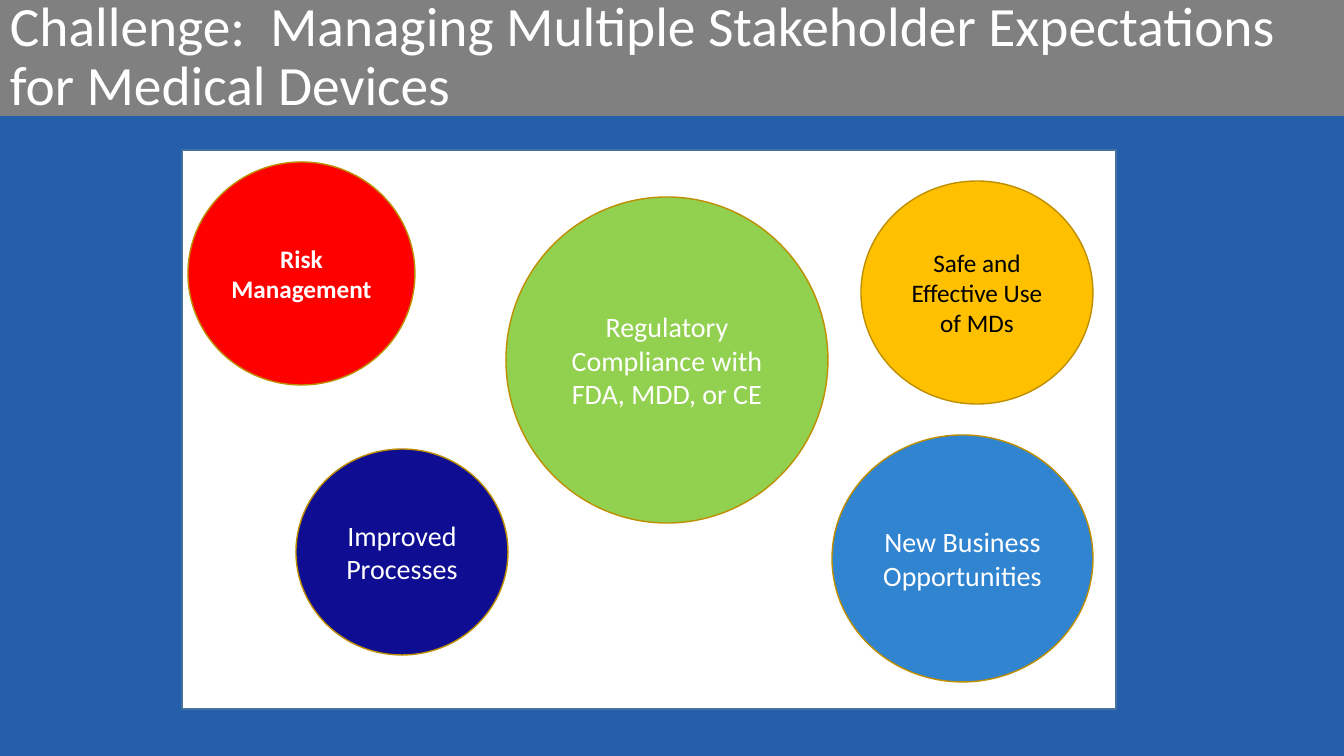
"""Build the slide on stakeholder expectations for medical devices."""
import pptx
import pptx.dml.color
import pptx.enum.shapes
import pptx.enum.text
import pptx.util

PX = 914400 / 100.8
SHAPE = pptx.enum.shapes.MSO_SHAPE
ALIGN = pptx.enum.text.PP_ALIGN
THEME = {
    "font": "Calibri",
    "background": "255EAB",
    "panel": "FFFFFF",
    "panel_line": "43739E",
    "banner": "808080",
    "bubble_line": "BD8E00",
    "risk": "FF0000",
    "compliance": "92D050",
    "business": "3184D0",
    "processes": "0F0D92",
    "safety": "FFC000",
    "light": "FFFFFF",
    "dark": "000000",
    "title_size": 39.6,
    "large": 20,
    "small": 18,
}
BUBBLES = [
    ("Risk Management", (188, 162, 227, 223), "risk", "small", "light", True),
    ("Regulatory Compliance with FDA, MDD, or CE", (506, 197, 322, 326),
     "compliance", "large", "light", False),
    ("New Business Opportunities", (832, 435, 261, 247),
     "business", "large", "light", False),
    ("Improved Processes", (296, 449, 212, 206),
     "processes", "large", "light", False),
    ("Safe and Effective Use of MDs", (861, 181, 232, 223),
     "safety", "small", "dark", False),
]


def emu(px):
    """Convert pixels to EMU."""
    return pptx.util.Emu(round(px * PX))


def color(name):
    """Return the theme colour of that name."""
    return pptx.dml.color.RGBColor.from_string(THEME[name])


def apply(target, values):
    """Set each attribute in values on target."""
    for name, value in values.items():
        setattr(target, name, value)


def add_box(s, kind, box, fill, line=None):
    """Add a flat filled shape, outlined when a line colour is named."""
    sp = s.shapes.add_shape(kind, *map(emu, box))
    sp.shadow.inherit = False
    sp.fill.solid()
    sp.fill.fore_color.rgb = color(fill)
    if line:
        sp.line.color.rgb = color(line)
        sp.line.width = pptx.util.Pt(1)
    else:
        sp.line.fill.background()
    return sp


def add_text(sp, text, size, ink, bold=False, **layout):
    """Write one vertically centred paragraph into a shape."""
    tf = sp.text_frame
    apply(tf, {"word_wrap": True,
               "vertical_anchor": pptx.enum.text.MSO_ANCHOR.MIDDLE})
    p = tf.paragraphs[0]
    apply(p, layout)
    r = p.add_run()
    r.text = text
    apply(r.font, {"name": THEME["font"], "bold": bold,
                   "size": pptx.util.Pt(THEME[size])})
    r.font.color.rgb = color(ink)


def add_banner(s, text):
    """Add the full-width title banner."""
    sp = add_box(s, SHAPE.RECTANGLE, (0, 0, 1344, 116), "banner")
    add_text(sp, text, "title_size", "light",
             alignment=ALIGN.LEFT, line_spacing=0.9)


def add_bubble(s, text, box, fill, size, ink, bold):
    """Add one labelled stakeholder bubble."""
    sp = add_box(s, SHAPE.OVAL, box, fill, "bubble_line")
    add_text(sp, text, size, ink, bold, alignment=ALIGN.CENTER)


def main():
    """Build and save the slide."""
    prs = pptx.Presentation()
    apply(prs, {"slide_width": emu(1344), "slide_height": emu(756)})
    s = prs.slides.add_slide(prs.slide_layouts[6])
    s.background.fill.solid()
    s.background.fill.fore_color.rgb = color("background")
    add_box(s, SHAPE.RECTANGLE, (182, 150, 934, 559), "panel", "panel_line")
    add_banner(s, "Challenge:  Managing Multiple Stakeholder Expectations "
                  "for Medical Devices")
    for bubble in BUBBLES:
        add_bubble(s, *bubble)
    prs.save("out.pptx")


if __name__ == "__main__":
    main()
